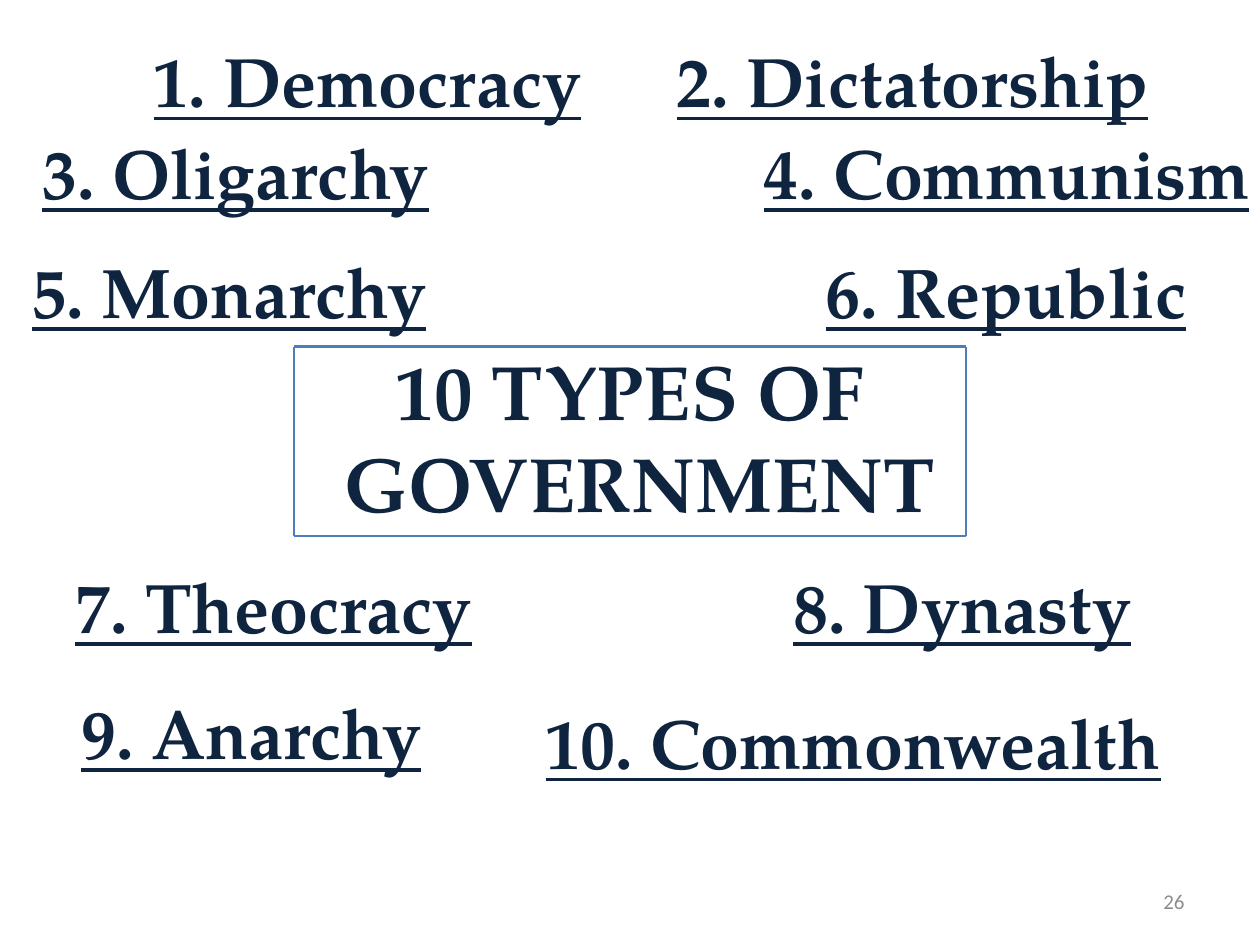
from itertools import pairwise

from lxml import etree
from pptx import Presentation
from pptx import util as u
from pptx.dml.color import RGBColor
from pptx.enum import shapes, text
from pptx.oxml.ns import qn

SERIF = "TeX Gyre Pagella"
NAVY, BLUE, GREY = "0F243E", "4B7EBC", "8C8C8C"
HEAD = dict(name=SERIF, size=u.Pt(44), bold=True)
ITEM = dict(name=SERIF, size=u.Pt(40), bold=True, underline=True)
NOTE = dict(name="Calibri", size=u.Pt(12))
MID, RIGHT = text.PP_ALIGN.CENTER, text.PP_ALIGN.RIGHT
HIGH = 1.96

TYPES = [
    ("1. Democracy", 2.54, 0.64, 9.73),
    ("2. Dictatorship", 12.9, 0.64, 11),
    ("3. Oligarchy", -0.23, 2.49, 9.96),
    ("4. Communism", 15.11, 2.49, 10.36),
    ("5. Monarchy", -0.36, 4.88, 9.96),
    ("6. Republic", 15.72, 4.88, 9.12),
    ("7. Theocracy", 1.07, 11.23, 8.89),
    ("8. Dynasty", 15.04, 11.23, 8.71),
    ("9. Anarchy", 0.84, 13.77, 8.46),
    ("10. Commonwealth", 9.96, 13.97, 14.48),
]


def tint(fmt, code):
    fmt.rgb = RGBColor.from_string(code)


def write(shape, words, look, code, align=MID, anchor=text.MSO_ANCHOR.TOP):
    frame = shape.text_frame
    frame.word_wrap = True
    frame.auto_size = text.MSO_AUTO_SIZE.NONE
    frame.vertical_anchor = anchor
    frame.text = words
    para = frame.paragraphs[0]
    para.alignment = align
    for run in para.runs:
        for key, val in look.items():
            setattr(run.font, key, val)
        tint(run.font.color, code)


def label(slide, box, words, look, code, **rest):
    shape = slide.shapes.add_textbox(*map(u.Cm, box))
    write(shape, words, look, code, **rest)


def title(slide, box):
    shape = slide.shapes.title
    for key, val in zip(("left", "top", "width", "height"), box):
        setattr(shape, key, u.Cm(val))
    write(shape, "10 TYPES OF \vGOVERNMENT", HEAD, NAVY,
          anchor=text.MSO_ANCHOR.MIDDLE)


def border(slide, box):
    x, y, w, h = box
    spots = [(x, y + h), (x, y), (x + w, y), (x + w, y + h), (x, y + h)]
    for (start, end), size in zip(pairwise(spots), (1.25, 1.5, 1.25, 1.25)):
        line = slide.shapes.add_connector(
            shapes.MSO_CONNECTOR.STRAIGHT, *map(u.Cm, start + end))
        line.line.width = u.Pt(size)
        tint(line.line.color, BLUE)
        etree.SubElement(line._element.spPr, qn("a:effectLst"))


def main():
    deck = Presentation()
    deck.slide_width, deck.slide_height = u.Cm(25.4), u.Cm(19.05)
    slide = deck.slides.add_slide(deck.slide_layouts[5])
    title(slide, (1.47, 7.19, 22.86, 3.18))
    label(slide, (18.2, 17.65, 5.93, 1.02), "26", NOTE, GREY,
          align=RIGHT, anchor=text.MSO_ANCHOR.MIDDLE)
    for words, x, y, w in TYPES:
        label(slide, (x, y, w, HIGH), words, ITEM, NAVY)
    border(slide, (5.93, 6.99, 13.55, 3.81))
    deck.save("out.pptx")


if __name__ == "__main__":
    main()
